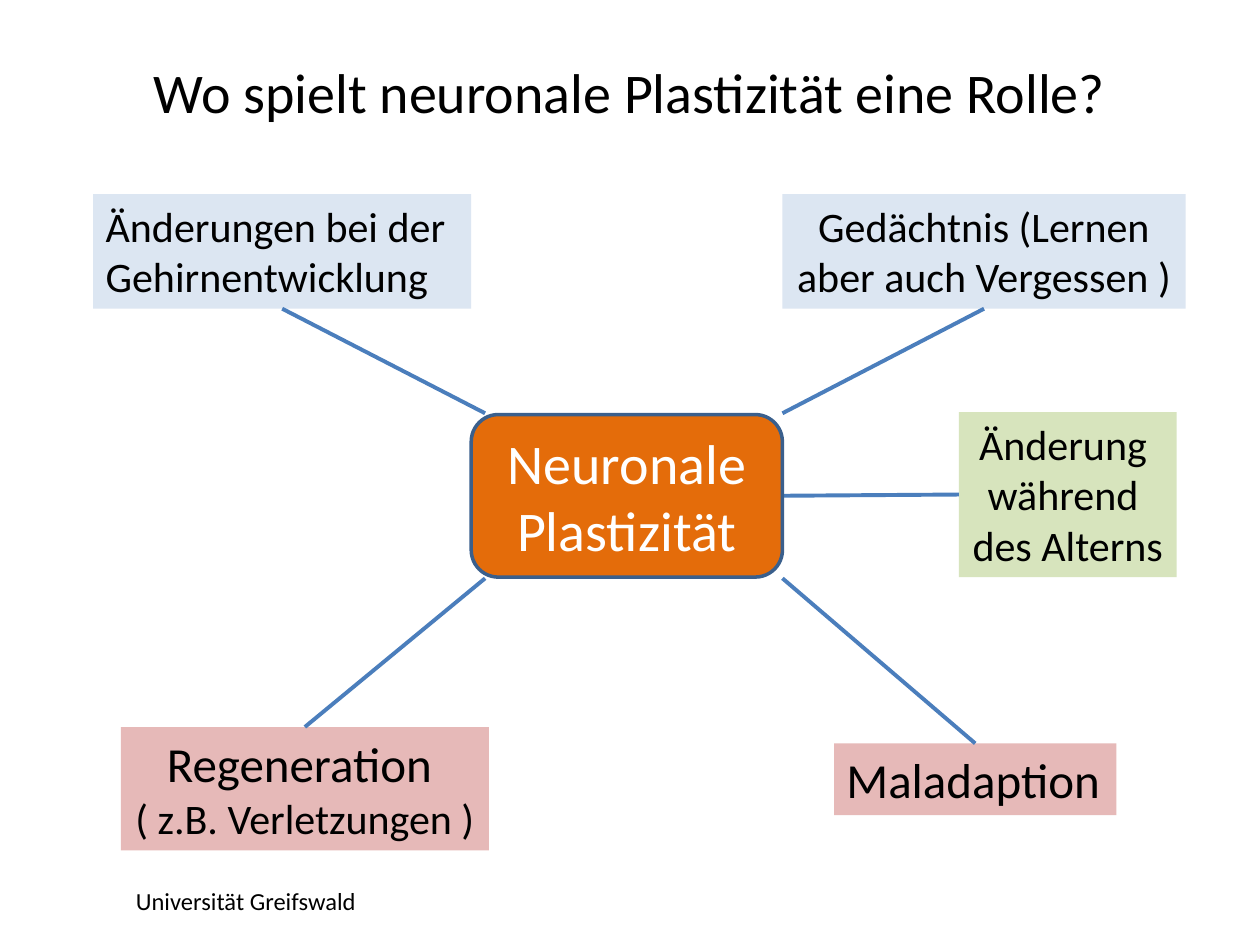
from pptx import Presentation
from pptx.dml.color import RGBColor as Rgb
from pptx.enum.shapes import MSO_CONNECTOR as Conn, MSO_SHAPE as Form
from pptx.enum.text import MSO_ANCHOR as Anchor, PP_ALIGN as Align
from pptx.oxml.ns import qn
from pptx.util import Inches, Pt
from lxml.etree import SubElement as Sub

HUES = {"ink": "000000", "white": "FFFFFF", "blue": "DCE6F2", "green": "D7E4BD",
        "pink": "E6B9B8", "core": "E46C0A", "edge": "3A5F8C", "link": "4B7EBC"}
TOP, LEFT, LOW, RIGHT = range(4)


class Map:
    """Draws a mind map on a grid of 100 columns and 75 rows."""

    def __init__(self, deck):
        self.deck = deck
        self.font = "Calibri"
        self.slide = deck.slides.add_slide(deck.slide_layouts[6])

    def place(self, *cells):
        unit = self.deck.slide_width / 100
        return [round(cell * unit) for cell in cells]

    def hue(self, name):
        return Rgb.from_string(HUES[name])

    def letter(self, shape, lines, ink="ink", align=Align.CENTER,
               anchor=Anchor.TOP, wrap=True):
        frame = shape.text_frame
        frame.word_wrap = wrap
        frame.vertical_anchor = anchor
        for i, (text, size) in enumerate(lines):
            para = frame.add_paragraph() if i else frame.paragraphs[0]
            para.alignment = align
            run = para.add_run()
            run.text = text
            run.font.name = self.font
            run.font.size = Pt(size)
            run.font.color.rgb = self.hue(ink)

    def label(self, cells, text, size, **style):
        box = self.slide.shapes.add_textbox(*self.place(*cells))
        self.letter(box, [(text, size)], **style)

    def box(self, cells, fill, lines, form=Form.RECTANGLE, edge=None, **style):
        shape = self.slide.shapes.add_shape(form, *self.place(*cells))
        shape.shadow.inherit = False
        shape.fill.solid()
        shape.fill.fore_color.rgb = self.hue(fill)
        if edge:
            shape.line.color.rgb = self.hue(edge)
            shape.line.width = Pt(2)
        else:
            shape.line.fill.background()
        self.letter(shape, lines, **style)
        return shape

    def link(self, start, box, side):
        line = self.slide.shapes.add_connector(
            Conn.STRAIGHT, *self.place(*start, *start))
        line.end_connect(box, side)
        line.line.color.rgb = self.hue("link")
        line.line.width = Pt(2.25)
        Sub(line._element.spPr, qn("a:effectLst"))
        return line


def main():
    deck = Presentation()
    deck.slide_width, deck.slide_height = Inches(10), Inches(7.5)
    page = Map(deck)
    page.label((5, 3, 90, 8.5), "Wo spielt neuronale Plastizität eine Rolle?", 32,
               anchor=Anchor.MIDDLE)
    growth = page.box((7.4, 15.4, 30, 9.1), "blue",
                      [("Änderungen bei der Gehirnentwicklung", 24)], align=Align.LEFT)
    memory = page.box((62.1, 15.4, 32, 9.1), "blue",
                      [("Gedächtnis (Lernen aber auch Vergessen )", 24)])
    age = page.box((76.1, 32.7, 17.3, 13.1), "green",
                   [("Änderung ", 24), ("während ", 24), ("des Alterns", 24)], wrap=False)
    repair = page.box((9.6, 57.7, 29.2, 9.8), "pink",
                      [("Regeneration ", 28), ("( z.B. Verletzungen )", 24)], wrap=False)
    harm = page.box((66.2, 59, 22.4, 5.7), "pink", [("Maladaption", 28)],
                    align=Align.LEFT, wrap=False)
    west, east, north, south = 38.5, 62.1, 32.8, 45.9
    for start, box, side in [((west, north), growth, LOW), ((east, north), memory, LOW),
                             ((east, south), harm, TOP), ((west, south), repair, TOP)]:
        page.link(start, box, side)
    spoke = page.link((east, 39.4), age, LEFT)
    core = page.box((37.4, 32.9, 24.7, 12.9), "core", [("Neuronale Plastizität", 32)],
                    form=Form.ROUNDED_RECTANGLE, edge="edge", ink="white",
                    anchor=Anchor.MIDDLE)
    spoke.begin_connect(core, RIGHT)
    page.label((9.8, 69.8, 26.8, 3.4), "Universität Greifswald", 14, align=Align.LEFT)
    deck.save("out.pptx")


if __name__ == "__main__":
    main()
